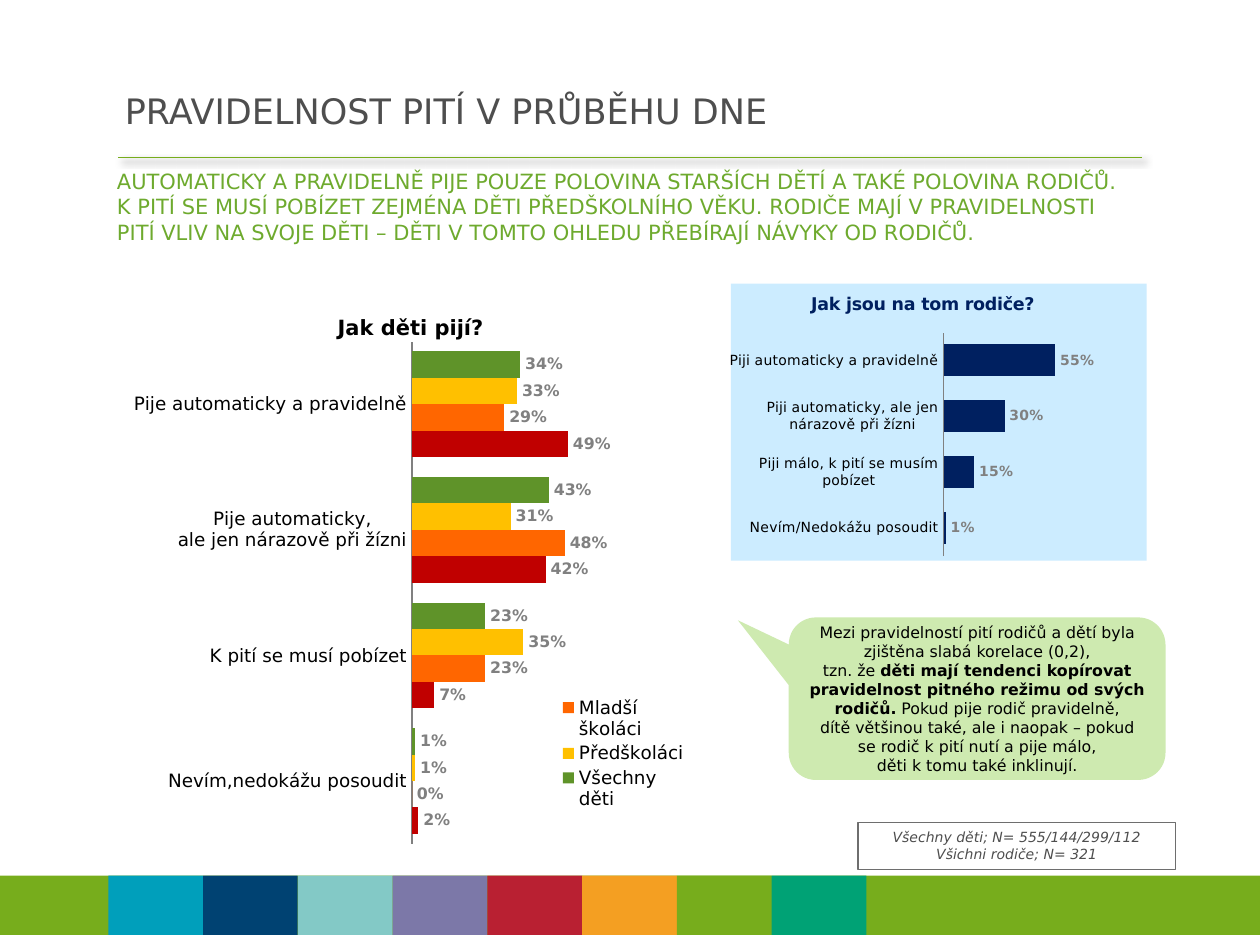
from lxml.etree import SubElement
from pptx import Presentation
from pptx.chart.data import CategoryChartData
from pptx.dml.color import RGBColor
from pptx.enum.chart import XL_CHART_TYPE, XL_LABEL_POSITION, XL_LEGEND_POSITION, XL_TICK_MARK
from pptx.enum.shapes import MSO_CONNECTOR, MSO_SHAPE
from pptx.enum.text import MSO_ANCHOR, PP_ALIGN
from pptx.oxml import parse_xml
from pptx.oxml.ns import nsdecls, qn
from pptx.util import Inches, Pt

COLORS = {
    "black": "000000", "text": "4E4E4E", "heading": "6EAA2E", "green": "77AD1C",
    "frame": "6E6E6E", "label": "808080", "navy": "002060", "panel": "CCECFF",
    "callout": "CEEAB0", "all": "5F9329", "preschool": "FFC000",
    "younger": "FF6600", "older": "C00000",
}
STRIPES = ["009FBB", "004272", "83C9C6", "7C78A8", "B92032", "F49F22", "77AD1C", "00A275"]


def color(name):
    return RGBColor.from_string(COLORS.get(name, name))


def style_font(font, size, ink="black", bold=False, italic=False):
    font.name = "DejaVu Sans"
    font.size = Pt(size)
    font.bold = bold
    font.italic = italic
    font.color.rgb = color(ink)


def write_text(paragraph, text, align=PP_ALIGN.LEFT, **style):
    paragraph.alignment = align
    for index, line in enumerate(text.split("\n")):
        if index:
            paragraph.add_line_break()
        if line:
            span = paragraph.add_run()
            span.text = line
            style_font(span.font, **style)


def place_part(parent, index, x, y, width=None, height=None, inner=False):
    for old in parent.findall(qn("c:layout")):
        parent.remove(old)
    layout = parse_xml(f"<c:layout {nsdecls('c')}><c:manualLayout/></c:layout>")
    manual = layout[0]
    settings = [("layoutTarget", "inner")] if inner else []
    settings += [("xMode", "edge"), ("yMode", "edge"), ("x", x), ("y", y)]
    if width is not None:
        settings += [("w", width), ("h", height)]
    for tag, value in settings:
        SubElement(manual, qn(f"c:{tag}")).set("val", str(value))
    parent.insert(index, layout)


class SlideBuilder:
    def __init__(self, deck):
        self.page = deck.slides.add_slide(deck.slide_layouts[5])

    def title(self, text, area):
        box = self.page.shapes.title
        box.left, box.top, box.width, box.height = map(Inches, area)
        box.text_frame.vertical_anchor = MSO_ANCHOR.MIDDLE
        write_text(box.text_frame.paragraphs[0], text, size=20, ink="text")

    def shape(self, area, kind=MSO_SHAPE.RECTANGLE, fill=None, line=None):
        box = self.page.shapes.add_shape(kind, *map(Inches, area))
        box.shadow.inherit = False
        if fill:
            box.fill.solid()
            box.fill.fore_color.rgb = color(fill)
        else:
            box.fill.background()
        if line:
            box.line.color.rgb = color(line)
            box.line.width = Pt(0.75)
        else:
            box.line.fill.background()
        return box

    def text(self, text, area, **style):
        box = self.page.shapes.add_textbox(*map(Inches, area))
        box.text_frame.word_wrap = True
        write_text(box.text_frame.paragraphs[0], text, **style)

    def rule(self, left, right, top):
        line = self.page.shapes.add_connector(
            MSO_CONNECTOR.STRAIGHT, *map(Inches, (left, top, right, top)))
        line.line.color.rgb = color("green")
        line.line.width = Pt(0.75)
        line._element.spPr.append(parse_xml(
            f'<a:effectLst {nsdecls("a")}><a:outerShdw blurRad="{Pt(4)}" dist="{Pt(3)}" '
            'dir="2700000" rotWithShape="0"><a:srgbClr val="000000">'
            '<a:alpha val="40000"/></a:srgbClr></a:outerShdw></a:effectLst>'))

    def bars(self, area, categories, series, title, title_at, plot_at,
             title_size, title_ink, axis_size, label_size, fill=None, axis_width=1):
        data = CategoryChartData(number_format="0%")
        data.categories = categories
        for name, values, _ in series:
            data.add_series(name, values)
        chart = self.page.shapes.add_chart(
            XL_CHART_TYPE.BAR_CLUSTERED, *map(Inches, area), data).chart
        style_font(chart.font, axis_size)
        chart.has_legend = False
        chart.has_title = True
        write_text(chart.chart_title.text_frame.paragraphs[0], title,
                   align=PP_ALIGN.CENTER, size=title_size, ink=title_ink, bold=True)
        place_part(chart.chart_title._element, 1, *title_at)
        place_part(chart._chartSpace.chart.plotArea, 0, *plot_at, inner=True)

        axis = chart.category_axis
        axis.reverse_order = True
        axis.major_tick_mark = XL_TICK_MARK.NONE
        axis.format.line.color.rgb = color("label")
        axis.format.line.width = Pt(axis_width)
        style_font(axis.tick_labels.font, axis_size)
        scale = chart.value_axis
        scale.minimum_scale, scale.maximum_scale = 0, 1
        scale.has_major_gridlines = False
        scale.visible = False

        plot = chart.plots[0]
        plot.gap_width = 75
        plot.overlap = 0
        plot.vary_by_categories = False
        for bar, (_, _, ink) in zip(plot.series, series):
            bar.format.fill.solid()
            bar.format.fill.fore_color.rgb = color(ink)
            labels = bar.data_labels
            labels.show_value = True
            labels.number_format = "0%"
            labels.number_format_is_linked = False
            labels.position = XL_LABEL_POSITION.OUTSIDE_END
            style_font(labels.font, label_size, "label", bold=True)
        if fill:
            chart._chartSpace.chart.addnext(parse_xml(
                f'<c:spPr {nsdecls("c", "a")}><a:solidFill><a:srgbClr val="{COLORS[fill]}"/>'
                '</a:solidFill><a:ln><a:noFill/></a:ln></c:spPr>'))
        return chart

    def legend(self, chart, hidden, area, size):
        chart.has_legend = True
        legend = chart.legend
        legend.position = XL_LEGEND_POSITION.RIGHT
        legend.include_in_layout = False
        style_font(legend.font, size)
        legend._element.insert(1, parse_xml(
            f'<c:legendEntry {nsdecls("c")}><c:idx val="{hidden}"/>'
            '<c:delete val="1"/></c:legendEntry>'))
        place_part(legend._element, 2, *area)


def main():
    deck = Presentation()
    deck.slide_width, deck.slide_height = Inches(10), Inches(7.5)
    slide = SlideBuilder(deck)

    slide.rule(0.94, 9.06, 1.25)
    slide.shape((0, 6.95, 10, 0.47), fill="green")
    for index, stripe in enumerate(STRIPES):
        slide.shape((0.86 + index * 0.752, 6.95, 0.752, 0.47), fill=stripe)

    slide.title("PRAVIDELNOST PITÍ V PRŮBĚHU DNE", (0.89, 0.62, 8.87, 0.51))
    slide.text(
        "AUTOMATICKY A PRAVIDELNĚ PIJE POUZE POLOVINA STARŠÍCH DĚTÍ A TAKÉ POLOVINA RODIČŮ.\n"
        "K PITÍ SE MUSÍ POBÍZET ZEJMÉNA DĚTI PŘEDŠKOLNÍHO VĚKU. RODIČE MAJÍ V PRAVIDELNOSTI\n"
        "PITÍ VLIV NA SVOJE DĚTI – DĚTI V TOMTO OHLEDU PŘEBÍRAJÍ NÁVYKY OD RODIČŮ.",
        (0.83, 1.29, 8.82, 0.55), size=12, ink="heading")

    children = slide.bars(
        (0.28, 2.25, 5.59, 4.52),
        ["Pije automaticky a pravidelně", "Pije automaticky,\nale jen nárazově při žízni",
         "K pití se musí pobízet", "Nevím,nedokážu posoudit"],
        [("Všechny děti", (0.34, 0.43, 0.23, 0.01), "all"),
         ("Předškoláci", (0.33, 0.31, 0.35, 0.01), "preschool"),
         ("Mladší školáci", (0.29, 0.48, 0.23, 0), "younger"),
         ("Starší školáci", (0.49, 0.42, 0.07, 0.02), "older")],
        "Jak děti pijí?", (0.424, 0.045), (0.535, 0.102, 0.452, 0.882),
        title_size=12, title_ink="black", axis_size=10.5, label_size=9, axis_width=1.5)
    slide.legend(children, 0, (0.74, 0.72, 0.19, 0.21), 10.5)

    slide.bars(
        (5.79, 2.25, 3.31, 2.2),
        ["Piji automaticky a pravidelně", "Piji automaticky, ale jen nárazově při žízni",
         "Piji málo, k pití se musím pobízet", "Nevím/Nedokážu posoudit"],
        [("Rodiče", (0.55, 0.3, 0.15, 0.01), "navy")],
        "Jak jsou na tom rodiče?", (0.185, 0.02), (0.569, 0.177, 0.488, 0.807),
        title_size=10, title_ink="navy", axis_size=8, label_size=8, fill="panel",
        axis_width=0.75)

    callout = slide.shape((6.26, 4.9, 2.99, 1.29),
                          MSO_SHAPE.ROUNDED_RECTANGULAR_CALLOUT, fill="callout")
    for index, value in enumerate((-0.635, -0.482, 0.167)):
        callout.adjustments[index] = value
    callout.text_frame.word_wrap = True
    callout.text_frame.vertical_anchor = MSO_ANCHOR.MIDDLE
    for text, bold in (
        ("Mezi pravidelností pití rodičů a dětí byla zjištěna slabá korelace (0,2),\ntzn. že ",
         False),
        ("děti mají tendenci kopírovat pravidelnost pitného režimu od svých rodičů.", True),
        (" Pokud pije rodič pravidelně,\ndítě většinou také, ale i naopak – pokud se rodič "
         "k pití nutí a pije málo,\nděti k tomu také inklinují.", False),
    ):
        write_text(callout.text_frame.paragraphs[0], text, align=PP_ALIGN.CENTER,
                   size=9, bold=bold)

    sample = slide.shape((6.81, 6.53, 2.52, 0.37), line="frame").text_frame
    sample.word_wrap = True
    sample.vertical_anchor = MSO_ANCHOR.TOP
    for paragraph, text in (
        (sample.paragraphs[0], "Všechny děti; N= 555/144/299/112"),
        (sample.add_paragraph(), "Všichni rodiče; N= 321"),
    ):
        write_text(paragraph, text, align=PP_ALIGN.CENTER, size=8, ink="text", italic=True)

    deck.save("out.pptx")


if __name__ == "__main__":
    main()
